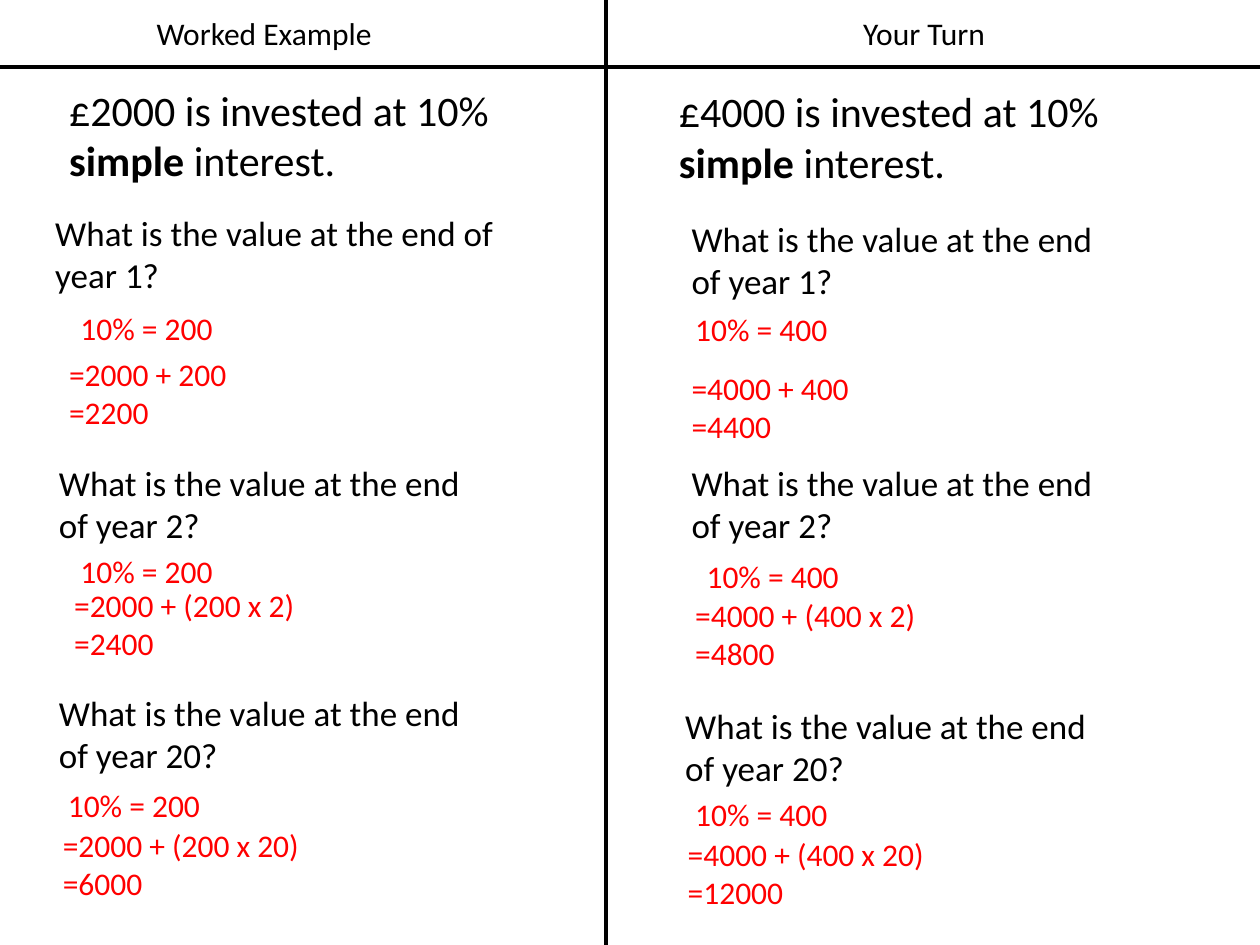
from pptx import Presentation
from pptx.dml.color import RGBColor
from pptx.enum.shapes import MSO_CONNECTOR
from pptx.enum.text import MSO_AUTO_SIZE, PP_ALIGN
from pptx.oxml.ns import qn
from pptx.util import Pt
from lxml.etree import SubElement

COLORS = {"text": "000000", "answer": "FF0000", "rule": "000000"}
FONT = "Calibri"
WIDTH, HEIGHT = 720, 540
DIVIDER_X, HEADER_Y = 346.3, 38.2
YEARS = (1, 2, 20)
WORKING_WIDTHS = (158.4, 158.4, 213.8)

COLUMNS = [
    {
        "title": "Worked Example", "title_at": (81.4, 4.3),
        "principal": 2000, "interest": 200, "intro_at": (32.4, 44.6),
        "question_at": [(24.5, 117.4), (26.6, 259.9), (26.6, 391.7)],
        "question_widths": (283, 263.5, 263.5),
        "percent_at": [(38.9, 172.8), (38.9, 311.8), (31.7, 445.7)],
        "working_at": [(32.4, 199.4), (35.3, 331.2), (28.8, 468.7)],
    },
    {
        "title": "Your Turn", "title_at": (458.6, 4.3),
        "principal": 4000, "interest": 400, "intro_at": (380.9, 45.4),
        "question_at": [(388.1, 121), (388.1, 259.9), (384.5, 398.9)],
        "question_widths": (263.5, 263.5, 263.5),
        "percent_at": [(390.2, 173.5), (396.7, 314.6), (390.2, 450.7)],
        "working_at": [(388.1, 207.4), (390.2, 337), (385.9, 473.8)],
    },
]


def add_text(page, at, size, lines, points, color="text", align=None, wrap=True):
    box = page.shapes.add_textbox(*map(Pt, (*at, *size)))
    frame = box.text_frame
    frame.word_wrap = wrap
    frame.auto_size = MSO_AUTO_SIZE.SHAPE_TO_FIT_TEXT
    for index, spans in enumerate(lines):
        para = frame.add_paragraph() if index else frame.paragraphs[0]
        para.alignment = align
        for text, bold in spans:
            span = para.add_run()
            span.text = text
            span.font.name = FONT
            span.font.size = Pt(points)
            span.font.bold = bold
            span.font.color.rgb = RGBColor.from_string(COLORS[color])


def add_rule(page, *ends):
    rule = page.shapes.add_connector(MSO_CONNECTOR.STRAIGHT, *map(Pt, ends))
    rule.line.width = Pt(2.5)
    rule.line.color.rgb = RGBColor.from_string(COLORS["rule"])
    SubElement(rule._element.spPr, qn("a:effectLst"))


def plain(*texts):
    return [[(text, False)] for text in texts]


def add_column(page, column):
    principal, interest = column["principal"], column["interest"]
    add_text(page, column["title_at"], (139, 28.8), plain(column["title"]), 18,
             align=PP_ALIGN.CENTER)
    intro = [(f"£{principal} is invested at 10% ", False), ("simple", True),
             (" interest.", False)]
    add_text(page, column["intro_at"], (289.4, 65.5), [intro], 24)

    steps = zip(YEARS, column["question_at"], column["question_widths"],
                column["percent_at"], column["working_at"], WORKING_WIDTHS)
    for year, question_at, question_width, percent_at, working_at, working_width in steps:
        add_text(page, question_at, (question_width, 55.4),
                 plain(f"What is the value at the end of year {year}?"), 20)
        add_text(page, percent_at, (90.7, 28.8), plain(f"10% = {interest}"), 18,
                 "answer", wrap=False)
        growth = f"({interest} x {year})" if year > 1 else f"{interest}"
        working = plain(f"={principal} + {growth}", f"={principal + interest * year}")
        add_text(page, working_at, (working_width, 51.1), working, 18, "answer")


def main():
    deck = Presentation()
    deck.slide_width, deck.slide_height = Pt(WIDTH), Pt(HEIGHT)
    page = deck.slides.add_slide(deck.slide_layouts[6])
    add_rule(page, DIVIDER_X, 0, DIVIDER_X, HEIGHT)
    add_rule(page, 0, HEADER_Y, WIDTH, HEADER_Y)
    for column in COLUMNS:
        add_column(page, column)
    deck.save("out.pptx")


if __name__ == "__main__":
    main()
